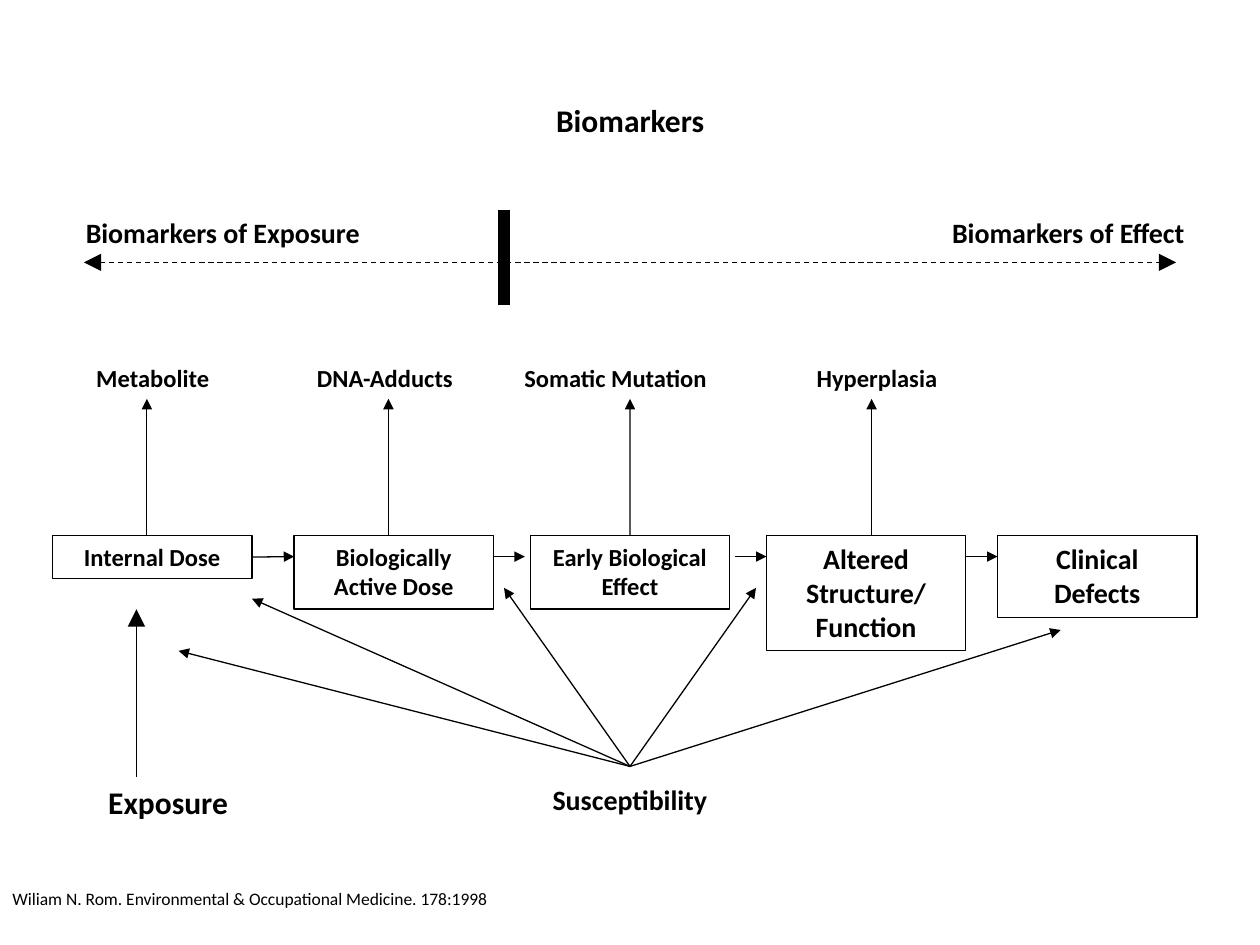
from dataclasses import dataclass

from lxml import etree
from pptx import Presentation
from pptx.dml.color import RGBColor
from pptx.enum import dml, shapes, text
from pptx.oxml.ns import qn
from pptx.util import Cm, Pt


@dataclass(frozen=True)
class Theme:
    font: str = "Calibri"
    ink: RGBColor = RGBColor(0, 0, 0)
    title: int = 18
    heading: int = 16
    label: int = 14
    citation: int = 10
    thin: float = 0.75
    thick: float = 7


THEME = Theme()
LEFT, CENTER, RIGHT = text.PP_ALIGN.LEFT, text.PP_ALIGN.CENTER, text.PP_ALIGN.RIGHT

# All positions are in centimetres: left, top, width, height.
TITLE = ("Biomarkers", (8.47, 1.9, 8.47, 1.27))
CITATION = ("Wiliam N. Rom. Environmental & Occupational Medicine. 178:1998", (0, 17.78, 10.31, 0.69))
HEADINGS = [
    ("Biomarkers of Exposure", (1.48, 4.23, 7.62, 0.94), LEFT, THEME.heading),
    ("Biomarkers of Effect", (17.57, 4.23, 6.56, 0.94), RIGHT, THEME.heading),
    ("Exposure", (0.85, 15.66, 5.08, 1.27), CENTER, THEME.title),
    ("Susceptibility", (9.42, 15.66, 6.56, 0.94), CENTER, THEME.heading),
]
# Text, left, height, type size
STEPS = [
    ("Internal Dose", 1.06, 0.86, THEME.label),
    ("Biologically Active Dose", 5.93, 1.48, THEME.label),
    ("Early Biological Effect", 10.69, 1.48, THEME.label),
    ("Altered Structure/\nFunction", 15.45, 2.31, THEME.heading),
    ("Clinical Defects", 20.11, 1.65, THEME.heading),
]
STEP_TOP, STEP_WIDTH = 10.8, 4.02
LINK_Y = 11.22
LINKS = [(5.08, 5.93), (9.95, 10.58), (14.82, 15.45), (19.47, 20.11)]
# Text, left, width, alignment
FINDINGS = [
    ("Metabolite", 1.69, 2.96, LEFT),
    ("DNA-Adducts", 6.14, 3.6, LEFT),
    ("Somatic Mutation", 10.32, 4.76, LEFT),
    ("Hyperplasia", 15.88, 3.6, CENTER),
]
FINDING_TOP, FINDING_HEIGHT = 7.2, 0.84
FIRST_FINDING_X, FINDING_PITCH = 2.96, 4.87
SUSCEPTIBILITY = (12.7, 15.45)
SUSCEPTIBLE_POINTS = [(3.6, 13.12), (5.08, 12.07), (10.16, 11.85), (15.24, 11.85), (21.38, 12.7)]


def write(box, words, size, align=LEFT, bold=True, wrap=True):
    frame = box.text_frame
    frame.word_wrap = wrap
    frame.auto_size = text.MSO_AUTO_SIZE.NONE
    frame.vertical_anchor = text.MSO_ANCHOR.TOP
    para = frame.paragraphs[0]
    para.alignment = align
    for index, line in enumerate(words.split("\n")):
        if index:
            para.add_line_break()
        span = para.add_run()
        span.text = line
        span.font.name = THEME.font
        span.font.size = Pt(size)
        span.font.bold = bold
        span.font.color.rgb = THEME.ink


def add_label(page, words, place, size, align=LEFT, **style):
    box = page.shapes.add_textbox(*map(Cm, place))
    write(box, words, size, align, **style)


def add_step(page, words, left, height, size):
    box = page.shapes.add_shape(
        shapes.MSO_SHAPE.RECTANGLE, Cm(left), Cm(STEP_TOP), Cm(STEP_WIDTH), Cm(height))
    box.shadow.inherit = False
    box.fill.background()
    box.line.color.rgb = THEME.ink
    box.line.width = Pt(THEME.thin)
    write(box, words, size, CENTER)
    return box


def add_line(page, start, end, ends=("tailEnd",), head_size="med", width=THEME.thin, dashed=False):
    """Draw a straight line; ends names the OOXML ends that carry an arrowhead."""
    line = page.shapes.add_connector(shapes.MSO_CONNECTOR.STRAIGHT, *map(Cm, start + end))
    line.line.color.rgb = THEME.ink
    line.line.width = Pt(width)
    if dashed:
        line.line.dash_style = dml.MSO_LINE.DASH
    outline = line.line._get_or_add_ln()
    for name in ends:
        etree.SubElement(outline, qn(f"a:{name}"), type="triangle", w=head_size, len=head_size)
    etree.SubElement(line._element.spPr, qn("a:effectLst"))
    return line


def main():
    deck = Presentation()
    deck.slide_width, deck.slide_height = Cm(25.4), Cm(19.05)
    page = deck.slides.add_slide(deck.slide_layouts[5])

    title = page.shapes.title
    words, place = TITLE
    title.left, title.top, title.width, title.height = map(Cm, place)
    write(title, words, THEME.title, CENTER)

    add_line(page, (1.69, 5.29), (23.71, 5.29), ("headEnd", "tailEnd"), "lg", dashed=True)
    add_line(page, (10.16, 4.23), (10.16, 6.14), (), width=THEME.thick)
    for words, place, align, size in HEADINGS:
        add_label(page, words, place, size, align)

    steps = [add_step(page, *step) for step in STEPS]
    links = [add_line(page, (start, LINK_Y), (end, LINK_Y)) for start, end in LINKS]
    links[0].begin_connect(steps[0], 3)

    rises = []
    for index, (words, left, width, align) in enumerate(FINDINGS):
        add_label(page, words, (left, FINDING_TOP, width, FINDING_HEIGHT), THEME.label, align)
        x = FIRST_FINDING_X + index * FINDING_PITCH
        rises.append(add_line(page, (x, STEP_TOP), (x, FINDING_TOP + FINDING_HEIGHT)))
    rises[2].begin_connect(steps[2], 0)

    add_line(page, (2.75, 15.66), (2.75, 12.28), head_size="lg")
    for point in SUSCEPTIBLE_POINTS:
        add_line(page, SUSCEPTIBILITY, point)

    words, place = CITATION
    add_label(page, words, place, THEME.citation, bold=False, wrap=False)
    deck.save("out.pptx")


if __name__ == "__main__":
    main()
